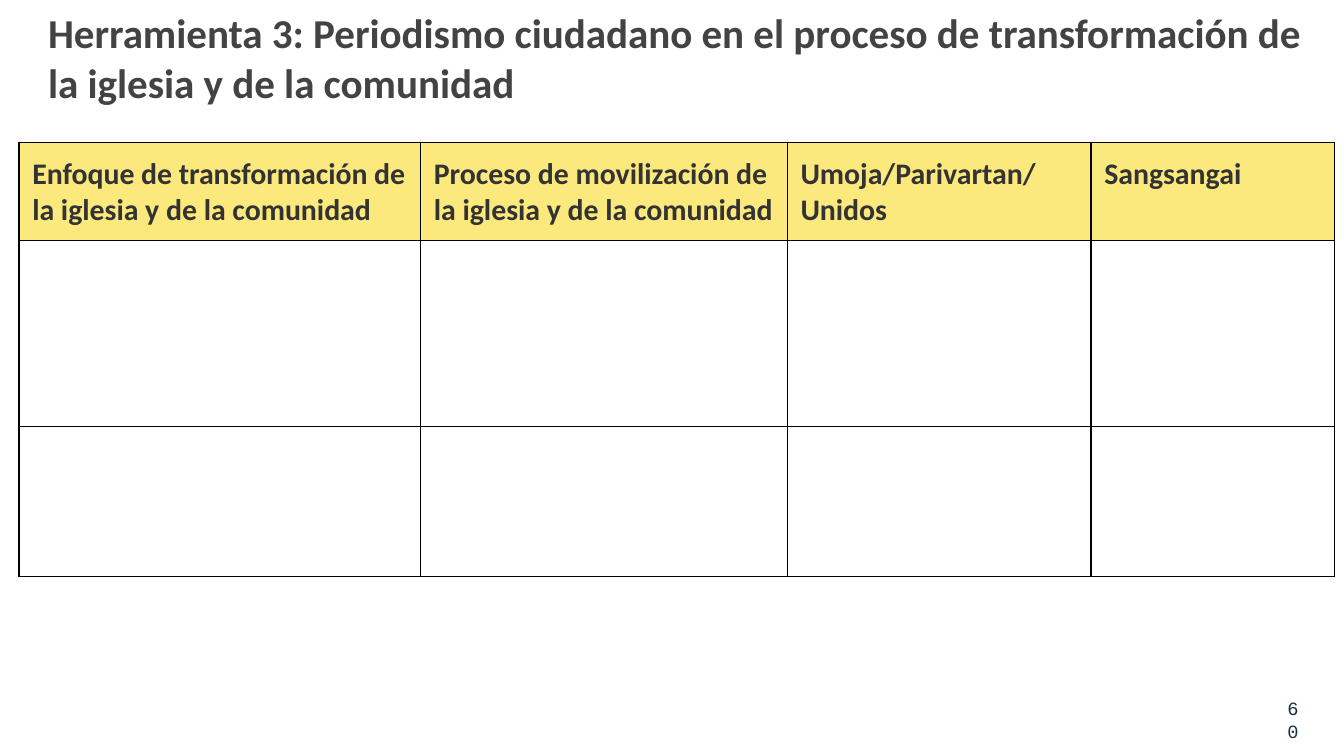
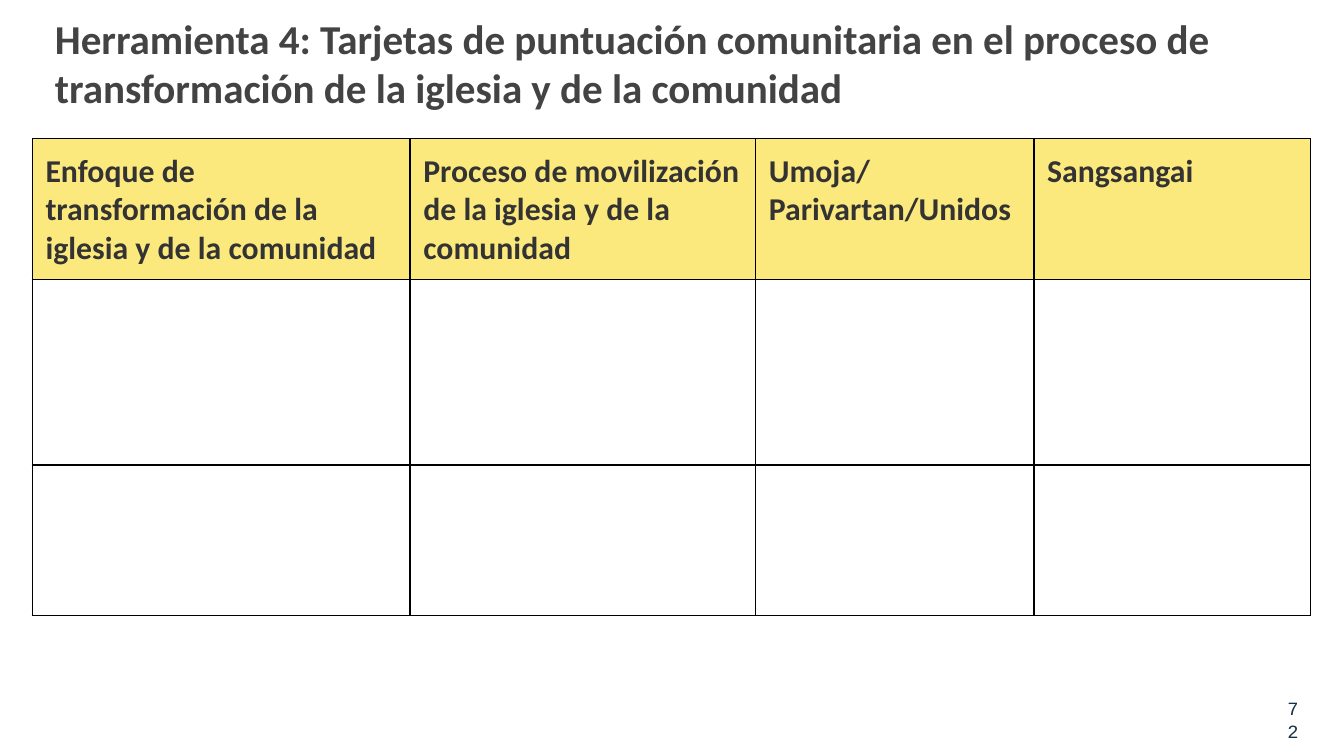
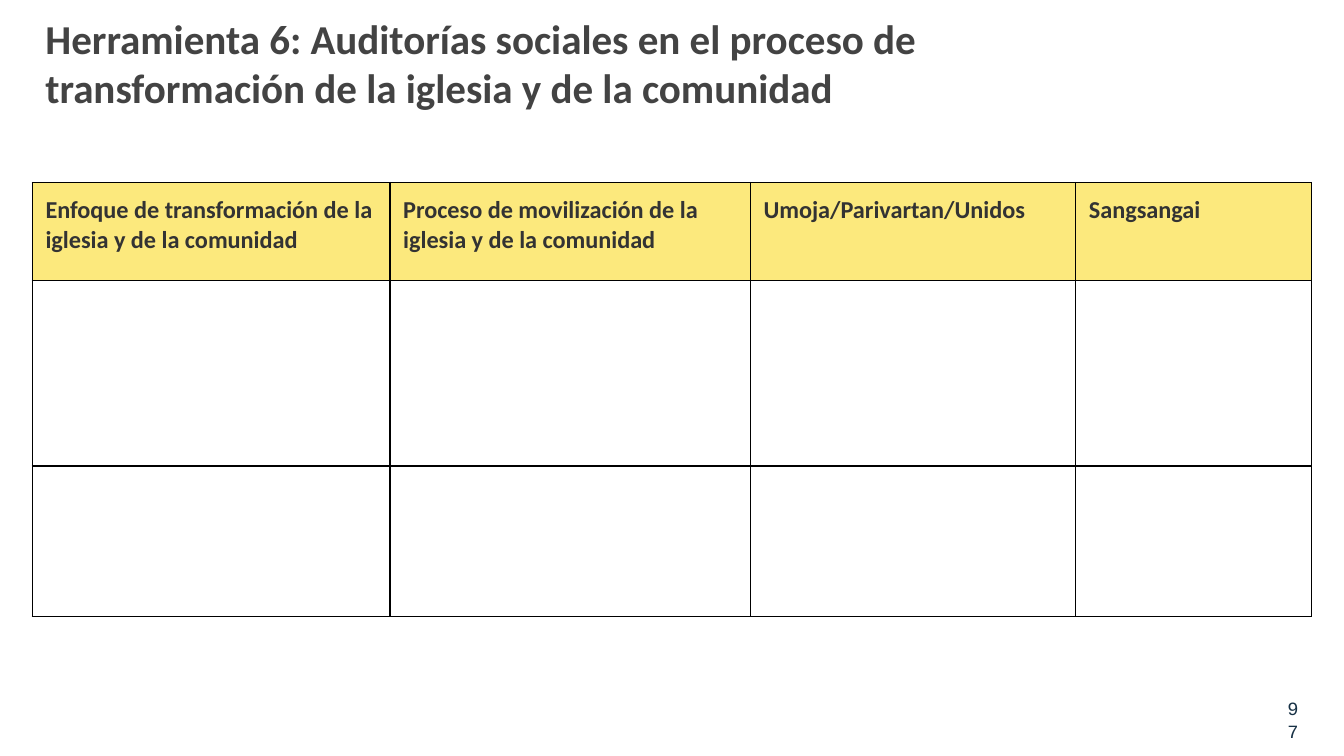
from lxml.etree import SubElement
from pptx import Presentation
from pptx.dml.color import RGBColor
from pptx.enum.text import MSO_ANCHOR, PP_ALIGN
from pptx.oxml.ns import qn
from pptx.util import Cm, Pt

GREY = RGBColor(0x43, 0x43, 0x43)
DARK = RGBColor(0x33, 0x33, 0x33)
NAVY = RGBColor(0x17, 0x31, 0x45)
YELLOW = RGBColor(0xFC, 0xE9, 0x7D)
WHITE = RGBColor(0xFF, 0xFF, 0xFF)
BLACK = RGBColor(0x00, 0x00, 0x00)

TITLE = {"name": "Calibri", "size": Pt(22), "bold": True}
HEAD = {"name": "Calibri", "bold": True}
NUMBER = {"name": "Courier New", "size": Pt(10)}

PAD = Cm(0.25)
ROWS = (1.85, 3.51, 2.84)
HEADS = (
    "Enfoque de transformación de la iglesia y de la comunidad",
    "Proceso de movilización de la iglesia y de la comunidad",
    "Umoja/Parivartan/Unidos",
    "Sangsangai",
)
SLIDES = (
    {
        "title": "Herramienta 3: Periodismo ciudadano en el proceso de "
                 "transformación de la iglesia y de la comunidad",
        "box": (0.66, -0.1, 24.38, 1.6),
        "grid": (0.36, 2.69),
        "cols": (7.59, 6.93, 5.74, 4.6),
        "size": 16,
        "number": "60",
    },
    {
        "title": "Herramienta 4: Tarjetas de puntuación comunitaria en el proceso de "
                 "transformación de la iglesia y de la comunidad",
        "box": (0.79, 0, 24.38, 1.6),
        "grid": (0.61, 2.62),
        "cols": (7.14, 6.53, 5.26, 5.23),
        "size": 17,
        "number": "72",
    },
    {
        "title": "Herramienta 6: Auditorías sociales en el proceso de "
                 "transformación de la iglesia y de la comunidad",
        "box": (0.61, 0, 17.73, 1.6),
        "grid": (0.61, 3.45),
        "cols": (6.76, 6.81, 6.15, 4.45),
        "size": 13,
        "number": "97",
    },
)


def set_pad(part):
    for side in ("left", "top", "right", "bottom"):
        setattr(part, f"margin_{side}", PAD)


def style(para, look, color):
    for key, value in look.items():
        setattr(para.font, key, value)
    para.font.color.rgb = color


def add_text(slide, text, box, look, color, align=PP_ALIGN.LEFT):
    frame = slide.shapes.add_textbox(*map(Cm, box)).text_frame
    frame.word_wrap = True
    frame.vertical_anchor = MSO_ANCHOR.TOP
    set_pad(frame)
    frame.text = text
    para = frame.paragraphs[0]
    para.alignment = align
    style(para, look, color)


def add_edges(cell):
    """Draw the four borders of a cell; call before filling it."""
    props = cell._tc.get_or_add_tcPr()
    for side in "LRTB":
        line = SubElement(props, qn(f"a:ln{side}"), w=str(Pt(0.75)))
        fill = SubElement(line, qn("a:solidFill"))
        SubElement(fill, qn("a:srgbClr"), val=str(BLACK))


def add_grid(slide, spot, cols, size):
    left, top = spot
    frame = slide.shapes.add_table(
        len(ROWS), len(cols),
        Cm(left), Cm(top), Cm(sum(cols)), Cm(sum(ROWS)))
    table = frame.table
    table.horz_banding = False
    for col, width in zip(table.columns, cols):
        col.width = Cm(width)
    for row, height in zip(table.rows, ROWS):
        row.height = Cm(height)
    for cell in table.iter_cells():
        set_pad(cell)
        add_edges(cell)
        cell.fill.solid()
        cell.fill.fore_color.rgb = WHITE
    for cell, text in zip(table.rows[0].cells, HEADS):
        cell.fill.fore_color.rgb = YELLOW
        cell.text = text
        style(cell.text_frame.paragraphs[0], HEAD | {"size": Pt(size)}, DARK)


def main():
    deck = Presentation()
    deck.slide_width, deck.slide_height = Cm(25.4), Cm(14.29)
    for item in SLIDES:
        slide = deck.slides.add_slide(deck.slide_layouts[6])
        add_text(slide, item["number"], (23.9, 12.93, 0.89, 0.76),
                 NUMBER, NAVY, PP_ALIGN.RIGHT)
        add_text(slide, item["title"], item["box"], TITLE, GREY)
        add_grid(slide, item["grid"], item["cols"], item["size"])
    deck.save("out.pptx")


if __name__ == "__main__":
    main()
